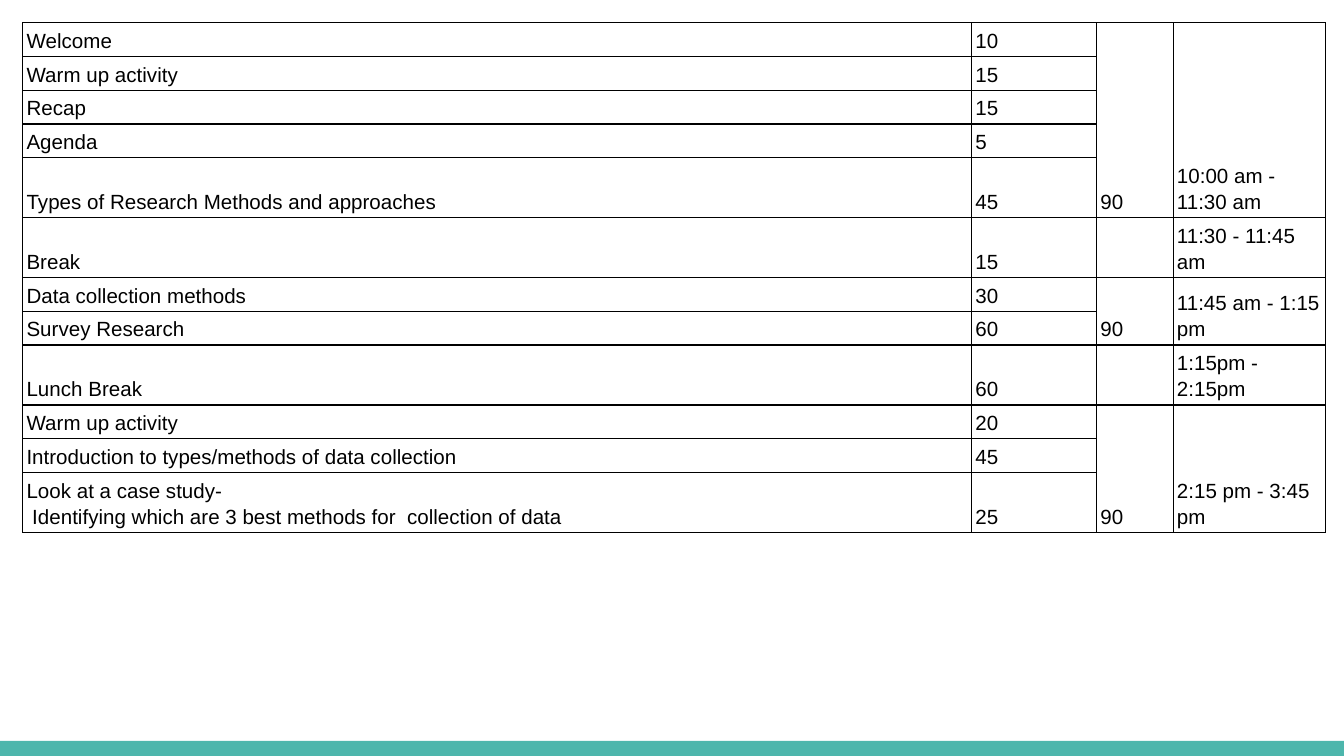
"""Build a workshop timetable slide with merged session cells."""
from dataclasses import dataclass

from lxml.etree import SubElement
from pptx import Presentation
from pptx.dml.color import RGBColor
from pptx.enum.shapes import MSO_SHAPE
from pptx.enum.text import MSO_ANCHOR
from pptx.oxml.ns import qn
from pptx.slide import Slide
from pptx.table import Table, _Cell
from pptx.util import Inches, Pt

WIDTH = Inches(10)
HEIGHT = WIDTH * 9 // 16
COLORS = {"ink": "000000", "bar": "4DB6AC"}
COLS = (0.706, 0.093, 0.057, 0.113)
ROWS = {1: Inches(0.25), 2: Inches(0.44)}
EDGE = Inches(0.17)
INSET = Pt(2)
THIN, THICK = Pt(0.75), Pt(1)


@dataclass
class Step:
    name: str
    mins: str
    lines: int = 1


@dataclass
class Block:
    hours: str
    total: str
    steps: list[Step]


BLOCKS = [
    Block("10:00 am - 11:30 am", "90", [
        Step("Welcome", "10"),
        Step("Warm up activity", "15"),
        Step("Recap", "15"),
        Step("Agenda", "5"),
        Step("Types of Research Methods and approaches", "45", 2),
    ]),
    Block("11:30 - 11:45 am", "", [Step("Break", "15", 2)]),
    Block("11:45 am - 1:15 pm", "90", [
        Step("Data collection methods", "30"),
        Step("Survey Research", "60"),
    ]),
    Block("1:15pm - 2:15pm", "", [Step("Lunch Break", "60", 2)]),
    Block("2:15 pm - 3:45 pm", "90", [
        Step("Warm up activity", "20"),
        Step("Introduction to types/methods of data collection", "45"),
        Step("Look at a case study-\n Identifying which are 3 best methods for  collection of data", "25", 2),
    ]),
]


def frame_cell(cell: _Cell, col: int) -> None:
    props = cell._tc.get_or_add_tcPr()
    for side in "LRTB":
        thick = (col, side) in ((0, "R"), (1, "L"))
        line = SubElement(props, qn(f"a:ln{side}"), w=str(THICK if thick else THIN))
        fill = SubElement(line, qn("a:solidFill"))
        SubElement(fill, qn("a:srgbClr"), val=COLORS["ink"])
    cell.fill.background()
    cell.margin_left = cell.margin_right = INSET
    cell.margin_top = cell.margin_bottom = INSET
    cell.vertical_anchor = MSO_ANCHOR.BOTTOM


def write_cell(cell: _Cell, text: str) -> None:
    cell.text_frame.text = text
    for para in cell.text_frame.paragraphs:
        para.line_spacing = 1.15
        para.font.size = Pt(11)
        for run in para.runs:
            run.font.size = Pt(11)
            run.font.name = "Arial"
            run.font.color.rgb = RGBColor.from_string(COLORS["ink"])


def fill_block(table: Table, block: Block, top: int) -> int:
    for row, step in enumerate(block.steps, top):
        table.rows[row].height = ROWS[step.lines]
        write_cell(table.cell(row, 0), step.name)
        write_cell(table.cell(row, 1), step.mins)
    end = top + len(block.steps)
    for col, text in ((2, block.total), (3, block.hours)):
        cell = table.cell(top, col)
        if end - top > 1:
            cell.merge(table.cell(end - 1, col))
        write_cell(cell, text)
    return end


def add_plan(slide: Slide, blocks: list[Block]) -> None:
    steps = [step for block in blocks for step in block.steps]
    width = int(sum(COLS) * WIDTH)
    height = sum(ROWS[step.lines] for step in steps)
    table = slide.shapes.add_table(len(steps), len(COLS), EDGE, EDGE, width, height).table
    table.first_row = table.horz_banding = False
    for col, share in enumerate(COLS):
        table.columns[col].width = int(share * WIDTH)
        for row in range(len(steps)):
            frame_cell(table.cell(row, col), col)
    top = 0
    for block in blocks:
        top = fill_block(table, block, top)


def add_bar(slide: Slide) -> None:
    deep = int(0.02 * HEIGHT)
    bar = slide.shapes.add_shape(MSO_SHAPE.RECTANGLE, 0, HEIGHT - deep, WIDTH, deep)
    bar.shadow.inherit = False
    bar.fill.solid()
    bar.fill.fore_color.rgb = RGBColor.from_string(COLORS["bar"])
    bar.line.fill.background()


def main() -> None:
    deck = Presentation()
    deck.slide_width, deck.slide_height = WIDTH, HEIGHT
    slide = deck.slides.add_slide(deck.slide_layouts[6])
    add_bar(slide)
    add_plan(slide, BLOCKS)
    deck.save("out.pptx")


if __name__ == "__main__":
    main()
